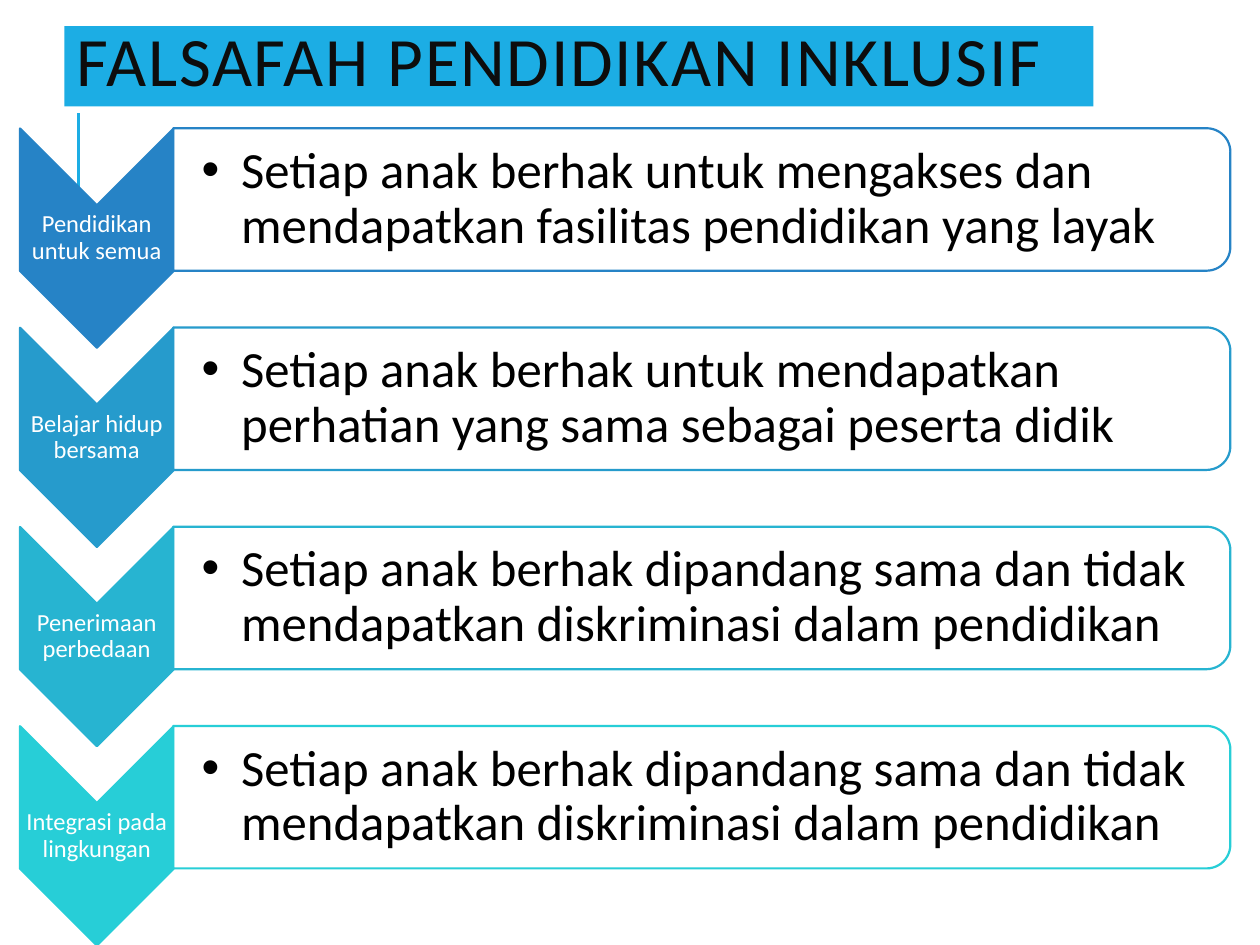
from lxml.etree import SubElement
from pptx import Presentation
from pptx.dml.color import RGBColor
from pptx.enum.shapes import MSO_CONNECTOR, MSO_SHAPE
from pptx.enum.text import MSO_ANCHOR, MSO_AUTO_SIZE, PP_ALIGN
from pptx.oxml.ns import qn
from pptx.util import Pt

COLORS = {"accent": "1CADE4", "title": "0D0D0D", "white": "FFFFFF", "black": "000000"}
STEPS = [
    ("2683C6", "Pendidikan untuk semua",
     "Setiap anak berhak untuk mengakses dan mendapatkan fasilitas pendidikan yang layak"),
    ("269BCC", "Belajar hidup bersama",
     "Setiap anak berhak untuk mendapatkan perhatian yang sama sebagai peserta didik"),
    ("27B4D1", "Penerimaan perbedaan",
     "Setiap anak berhak dipandang sama dan tidak mendapatkan diskriminasi dalam pendidikan"),
    ("27CED7", "Integrasi pada lingkungan",
     "Setiap anak berhak dipandang sama dan tidak mendapatkan diskriminasi dalam pendidikan"),
]
STEP_PITCH = 113.85


def add_turned_shape(kind, center_x, center_y, width, height, fill, line):
    """Add a shape turned a quarter clockwise; width and height are before the turn."""
    shape = slide.shapes.add_shape(kind, Pt(center_x - width / 2), Pt(center_y - height / 2),
                                   Pt(width), Pt(height))
    shape.rotation = 90
    shape.shadow.inherit = False
    shape.fill.solid()
    shape.fill.fore_color.rgb = RGBColor.from_string(fill)
    shape.line.color.rgb = RGBColor.from_string(line)
    shape.line.width = Pt(1.25)
    return shape


def write_text(shape, text, size, color, spacing, insets):
    """Fill a shape with one vertically centred paragraph and return the paragraph and run."""
    frame = shape.text_frame
    frame.word_wrap = True
    frame.auto_size = MSO_AUTO_SIZE.NONE
    frame.vertical_anchor = MSO_ANCHOR.MIDDLE
    (frame.margin_left, frame.margin_top,
     frame.margin_right, frame.margin_bottom) = [Pt(inset) for inset in insets]
    paragraph = frame.paragraphs[0]
    paragraph.line_spacing = spacing
    run = paragraph.add_run()
    run.text = text
    run.font.name = "Calibri"
    run.font.size = Pt(size)
    run.font.color.rgb = RGBColor.from_string(COLORS[color])
    return paragraph, run


presentation = Presentation()
presentation.slide_width, presentation.slide_height = Pt(720), Pt(540)
slide = presentation.slides.add_slide(presentation.slide_layouts[5])

# Title band
title = slide.shapes.title
title.left, title.top, title.width, title.height = Pt(36.8), Pt(15), Pt(588), Pt(45.8)
title.fill.solid()
title.fill.fore_color.rgb = RGBColor.from_string(COLORS["accent"])
paragraph, run = write_text(title, "FALSAFAH PENDIDIKAN INKLUSIF", 39.6, "title", 0.8,
                            (7.2, 3.6, 7.2, 3.6))
paragraph.alignment = PP_ALIGN.LEFT
run.font._element.set("spc", "100")

# Vertical rule below the title
rule = slide.shapes.add_connector(MSO_CONNECTOR.STRAIGHT, Pt(45), Pt(136.8), Pt(45), Pt(64.8))
rule.line.color.rgb = RGBColor.from_string(COLORS["accent"])
rule.line.width = Pt(1.5)
SubElement(rule._element.spPr, qn("a:effectLst"))

# Chevron list
for index, (color, label, statement) in enumerate(STEPS):
    offset = index * STEP_PITCH

    # Chevron and its label
    add_turned_shape(MSO_SHAPE.CHEVRON, 55.3, 136.1 + offset, 125.3, 87.8, color, color)
    label_box = slide.shapes.add_textbox(Pt(11.4), Pt(117.4 + offset), Pt(87.8), Pt(37.4))
    paragraph, run = write_text(label_box, label, 14, "white", 0.9, (0.7, 0.7, 0.7, 0.7))
    paragraph.alignment = PP_ALIGN.CENTER

    # Panel, ten percent transparent, and its statement
    panel = add_turned_shape(MSO_SHAPE.ROUND_2_SAME_RECTANGLE, 401, 114 + offset, 81.4, 604.1,
                             COLORS["white"], color)
    fill_color = panel._element.spPr.find(qn("a:solidFill"))[0]
    SubElement(fill_color, qn("a:alpha"), val="90000")
    statement_box = slide.shapes.add_textbox(Pt(98.9), Pt(77.2 + offset), Pt(600.5), Pt(73.4))
    paragraph, run = write_text(statement_box, statement, 29, "black", 0.9,
                                (16.4, 1.4, 1.4, 1.4))
    paragraph.level = 1
    properties = paragraph._p.get_or_add_pPr()
    properties.set("marL", str(Pt(22.5)))
    properties.set("indent", str(-Pt(22.5)))
    SubElement(properties, qn("a:buFont"), typeface="Arial")
    SubElement(properties, qn("a:buChar"), char="•")

presentation.save("out.pptx")
